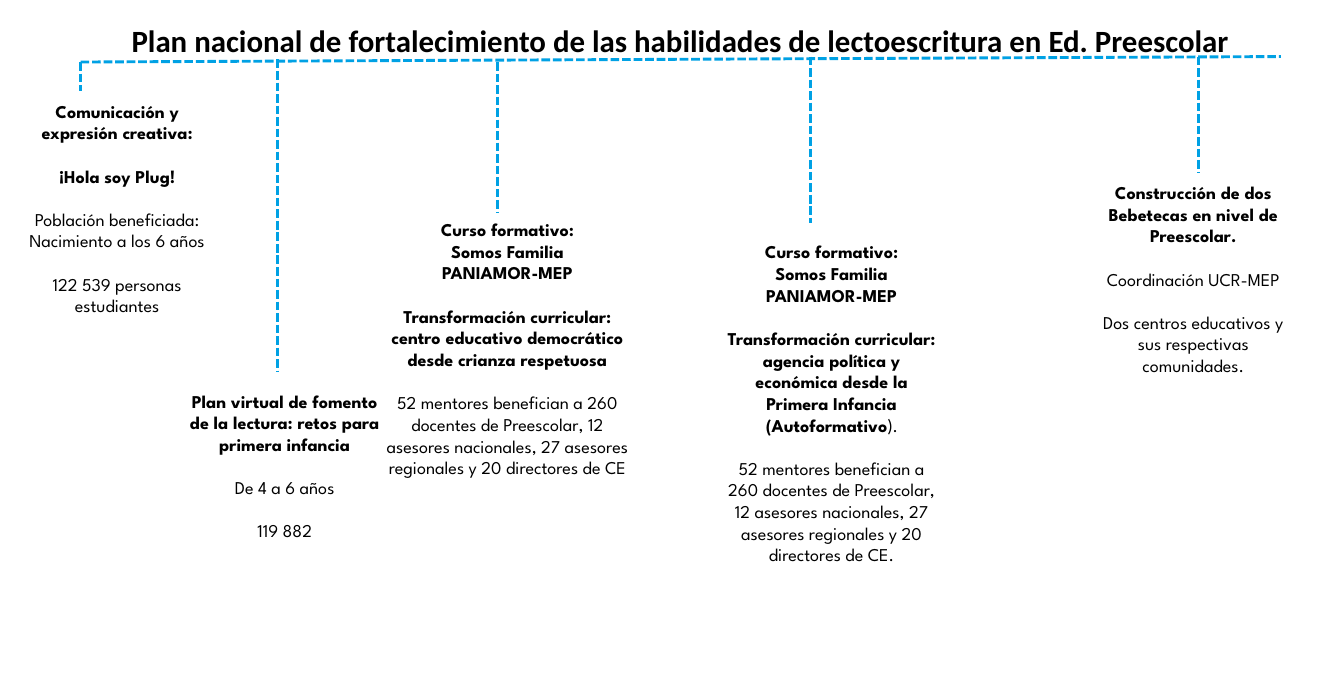
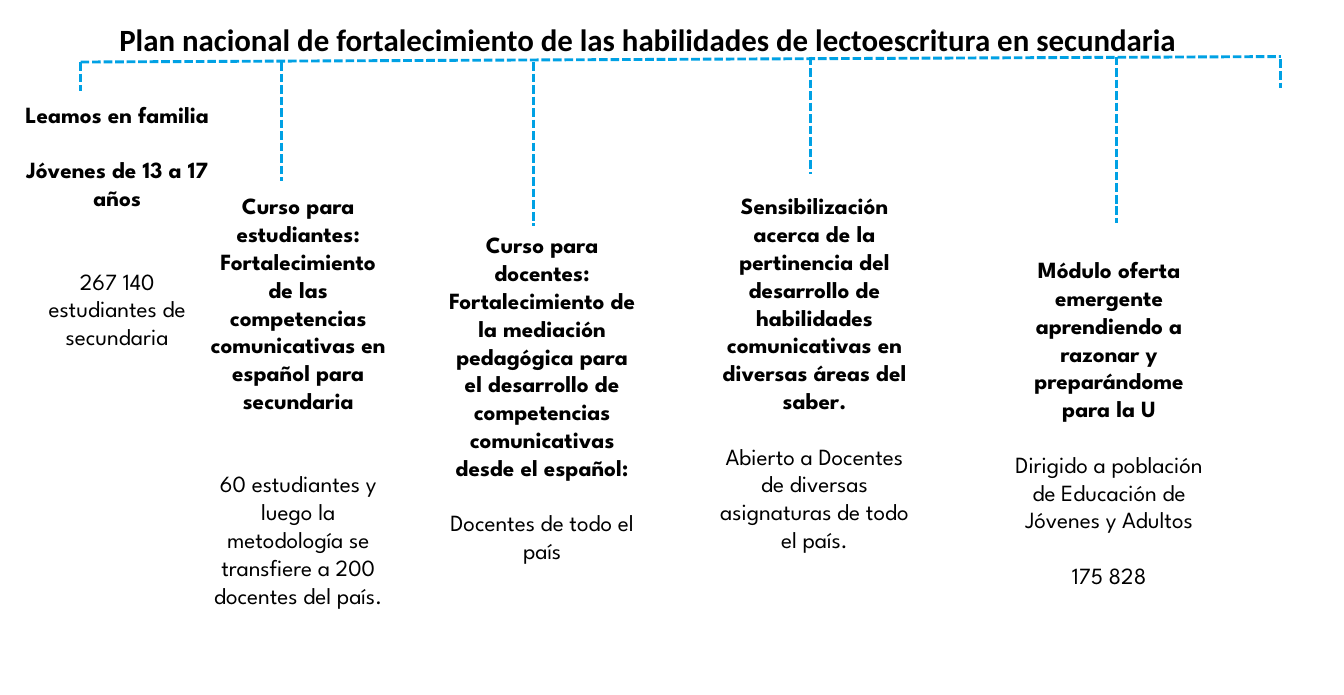
"""Build two branching overviews of the national literacy plan: preschool and secondary."""
from lxml import etree
from pptx import Presentation
from pptx import util as u
from pptx.dml.color import RGBColor
from pptx.enum import dml, shapes, text
from pptx.oxml.ns import qn

BRANCH_COLOR, TEXT_COLOR = "00A1E4", "000000"
TITLE_FONT, BODY_FONT = "Calibri", "League Spartan"
BAR = (2.21, 1.7, 35.13, 1.55)
FIRST_BRANCH = (2.21, 1.7, 2.49)
LINE_HEIGHT = 1.2


def write(paragraph, wording, **formats):
    paragraph.alignment = text.PP_ALIGN.CENTER
    run = paragraph.add_run()
    run.text = wording
    for name, value in formats.items():
        setattr(run.font, name, value)
    run.font.color.rgb = RGBColor.from_string(TEXT_COLOR)


def draw_dashed(slide, *ends):
    line = slide.shapes.add_connector(shapes.MSO_CONNECTOR.STRAIGHT, *map(u.Cm, ends))
    line.line.color.rgb = RGBColor.from_string(BRANCH_COLOR)
    line.line.width = u.Pt(2.25)
    line.line.dash_style = dml.MSO_LINE.SQUARE_DOT
    etree.SubElement(line._element.spPr, qn("a:effectLst"))


# Branches: x, top, bottom. Programmes: box, then (blank lines before, bold, wording).
plans = [
    {
        "title": "Plan nacional de fortalecimiento de las habilidades de lectoescritura en Ed. Preescolar",
        "title_at": (3.1, 0.46),
        "size": 14,
        "branches": [(7.62, 1.63, 10.21), (13.64, 1.7, 5.82), (22.23, 1.55, 6.12), (32.87, 1.55, 4.72)],
        "programmes": [
            ((0.41, 2.62, 5.61, 7.44), [
                (0, True, "Comunicación y expresión creativa:"),
                (1, True, "¡Hola soy Plug!"),
                (1, False, "Población beneficiada: Nacimiento a los 6 años"),
                (1, False, "122 539 personas estudiantes")]),
            ((4.9, 10.57, 5.82, 6.83), [
                (0, True, "Plan virtual de fomento de la lectura: retos para primera infancia"),
                (1, False, "De 4 a 6 años"),
                (1, False, "119 882")]),
            ((10.34, 5.87, 7.16, 9.25), [
                (0, True, "Curso formativo:"),
                (0, True, "Somos Familia"),
                (0, True, "PANIAMOR-MEP"),
                (1, True, "Transformación curricular: centro educativo democrático desde crianza respetuosa"),
                (1, False, "52 mentores benefician a 260 docentes de Preescolar, 12 asesores nacionales, "
                           "27 asesores regionales y 20 directores de CE")]),
            ((19.61, 6.48, 6.4, 10.44), [
                (0, True, "Curso formativo:"),
                (0, True, "Somos Familia"),
                (0, True, "PANIAMOR-MEP"),
                (1, True, "Transformación curricular: agencia política y económica desde la "
                          "Primera Infancia (Autoformativo|)."),
                (1, False, "52 mentores benefician a 260 docentes de Preescolar, 12 asesores nacionales, "
                           "27 asesores regionales y 20 directores de CE.")]),
            ((29.82, 4.85, 5.82, 6.83), [
                (0, True, "Construcción de dos Bebetecas en nivel de Preescolar."),
                (1, False, "Coordinación UCR-MEP"),
                (1, False, "Dos centros educativos y sus respectivas comunidades.")]),
        ],
    },
    {
        "title": "Plan nacional de fortalecimiento de las habilidades de lectoescritura en secundaria",
        "title_at": (2.21, 0.43),
        "size": 18,
        "branches": [(7.72, 1.7, 4.95), (14.63, 1.7, 6.2), (22.23, 1.55, 4.78), (30.63, 1.55, 6.12),
                     (35.13, 1.63, 2.41)],
        "programmes": [
            ((0.41, 2.62, 5.61, 7.95), [
                (0, True, "Leamos en familia"),
                (1, True, "Jóvenes de 13 a 17 años"),
                (2, False, "267 140 estudiantes de secundaria")]),
            ((5.41, 5.13, 5.54, 13.7), [
                (0, True, "Curso para estudiantes: Fortalecimiento de las competencias comunicativas "
                          "en español para secundaria"),
                (2, False, "60 estudiantes y luego la metodología se transfiere a 200 docentes del país.")]),
            ((11.96, 6.2, 5.82, 11.79), [
                (0, True, "Curso para docentes:"),
                (0, True, "Fortalecimiento de la mediación pedagógica para el desarrollo de competencias "
                          "comunicativas desde el español:"),
                (1, False, "Docentes de todo el país")]),
            ((19.43, 5.13, 5.82, 11.02), [
                (0, True, "Sensibilización acerca de la pertinencia del desarrollo de habilidades "
                          "comunicativas en diversas áreas del saber."),
                (1, False, "Abierto a Docentes de diversas asignaturas de todo el país.")]),
            ((27.51, 6.88, 5.82, 11.79), [
                (0, True, "Módulo oferta emergente aprendiendo a razonar y preparándome para la U"),
                (1, False, "Dirigido a población de Educación de Jóvenes y Adultos"),
                (1, False, "175 828")]),
        ],
    },
]

deck = Presentation()
deck.slide_width, deck.slide_height = u.Cm(36.86), u.Cm(19.05)

for plan in plans:
    slide = deck.slides.add_slide(deck.slide_layouts[5])
    title = slide.shapes.title
    place = dict(zip(("left", "top", "width", "height"), (*plan["title_at"], 31.12, 1.27)))
    for name, value in place.items():
        setattr(title, name, u.Cm(value))
    title.text_frame.auto_size = text.MSO_AUTO_SIZE.NONE
    title.text_frame.vertical_anchor = text.MSO_ANCHOR.TOP
    write(title.text_frame.paragraphs[0], plan["title"], name=TITLE_FONT, size=u.Pt(24), bold=True)

    draw_dashed(slide, *BAR)
    for x, top, bottom in [FIRST_BRANCH, *plan["branches"]]:
        draw_dashed(slide, x, top, x, bottom)

    size = u.Pt(plan["size"])
    for box, entries in plan["programmes"]:
        frame = slide.shapes.add_textbox(*map(u.Cm, box)).text_frame
        frame.word_wrap = True
        for index, (blank_lines, bold, wording) in enumerate(entries):
            paragraph = frame.add_paragraph() if index else frame.paragraphs[0]
            if blank_lines:
                paragraph.space_before = u.Pt(blank_lines * plan["size"] * LINE_HEIGHT)
            main, _, ending = wording.partition("|")
            write(paragraph, main, name=BODY_FONT, size=size, bold=bold)
            if ending:
                write(paragraph, ending, name=TITLE_FONT, size=size, bold=False)

deck.save("out.pptx")
